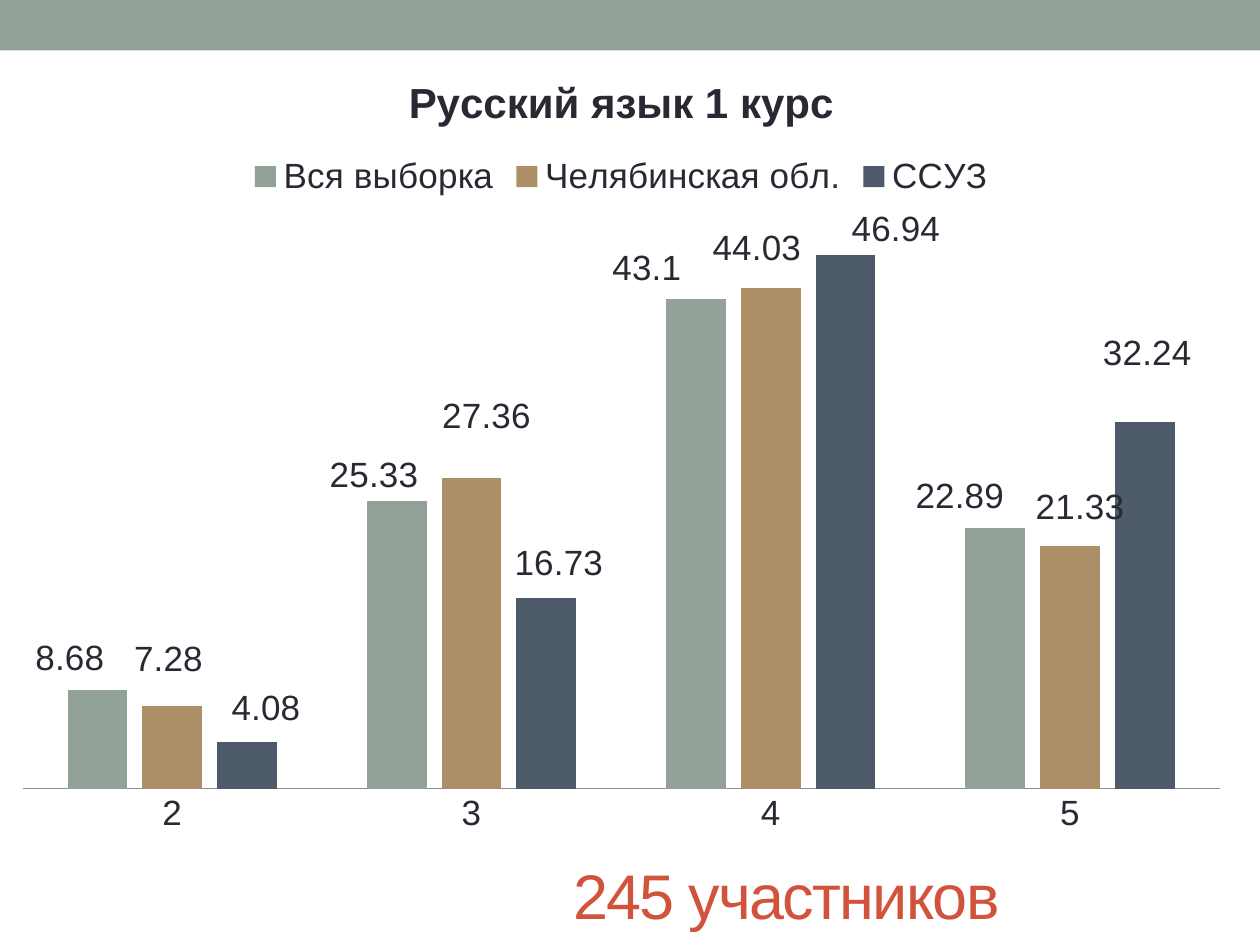
from lxml.etree import SubElement
from pptx import Presentation
from pptx.chart.data import CategoryChartData
from pptx.dml.color import RGBColor
from pptx.enum.chart import (XL_CHART_TYPE, XL_LABEL_POSITION,
                             XL_LEGEND_POSITION, XL_TICK_MARK)
from pptx.enum.shapes import MSO_SHAPE
from pptx.enum.text import MSO_ANCHOR, PP_ALIGN
from pptx.oxml.ns import qn
from pptx.util import Inches, Pt

FONT = "Arial"
GRADES = ["2", "3", "4", "5"]
SERIES = [
    ("Вся выборка", "93A299", [8.68, 25.33, 43.1, 22.89],
     [(-0.22, -0.05), (-0.18, 0), (-0.39, -0.04), (-0.28, -0.06)]),
    ("Челябинская обл.", "AD8F67", [7.28, 27.36, 44.03, 21.33],
     [(-0.03, -0.17), (0.12, -0.29), (-0.11, -0.12), (0.08, -0.11)]),
    ("ССУЗ", "4C5A6A", [4.08, 16.73, 46.94, 32.24],
     [(0.15, -0.07), (0.1, -0.08), (0.4, -0.01), (0.02, -0.35)]),
]


def rgb(value):
    """Return the colour for a hex string."""
    return RGBColor.from_string(value)


def style_font(font, size, color, bold=False):
    """Set face, size, colour and weight of a font."""
    font.name, font.size, font.bold = FONT, Pt(size), bold
    font.color.rgb = rgb(color)


def set_layout(parent, index, **settings):
    """Replace the layout of a chart part by a manual one."""
    for old in parent.findall(qn("c:layout")):
        parent.remove(old)
    layout = SubElement(parent, qn("c:layout"))
    manual = SubElement(layout, qn("c:manualLayout"))
    for tag, value in settings.items():
        SubElement(manual, qn(f"c:{tag}")).set("val", str(value))
    parent.insert(index, layout)


def add_band(slide, left, top, width, height):
    """Draw the coloured band."""
    sp = slide.shapes.add_shape(MSO_SHAPE.RECTANGLE, left, top, width, height)
    sp.shadow.inherit = False
    sp.fill.solid()
    sp.fill.fore_color.rgb = rgb("93A299")
    sp.line.fill.background()


def place_title(slide, left, top, width, height):
    """Place and format the slide title."""
    title = slide.shapes.title
    title.left, title.top, title.width, title.height = left, top, width, height
    tf = title.text_frame
    tf.text = "245 участников"
    tf.vertical_anchor = MSO_ANCHOR.MIDDLE
    p = tf.paragraphs[0]
    p.alignment = PP_ALIGN.LEFT
    r = p.runs[0]
    style_font(r.font, 36, "D2533C")
    r.font._element.set("spc", "-100")


def label_points(series, offsets, width, height):
    """Show the values of a series, each label shifted by its offset in inches."""
    series.data_labels.show_value = True
    for i in range(len(offsets)):
        series.points[i].data_label.position = XL_LABEL_POSITION.OUTSIDE_END
    for leader in series._element.xpath("c:dLbls/c:showLeaderLines"):
        leader.set("val", "0")
    labels = series._element.xpath("c:dLbls/c:dLbl")
    for label, (dx, dy) in zip(labels, offsets):
        set_layout(label, 1, x=Inches(dx) / width, y=Inches(dy) / height)


def add_grades_chart(slide, left, top, width, height):
    """Add the clustered column chart of grades."""
    data = CategoryChartData()
    data.categories = GRADES
    for name, _, values, _ in SERIES:
        data.add_series(name, values)
    chart = slide.shapes.add_chart(XL_CHART_TYPE.COLUMN_CLUSTERED,
                                   left, top, width, height, data).chart
    style_font(chart.font, 20, "292934")

    chart.has_title = True
    tf = chart.chart_title.text_frame
    tf.text = "Русский язык 1 курс"
    style_font(tf.paragraphs[0].runs[0].font, 24, "292934", bold=True)
    chart.has_legend = True
    chart.legend.position = XL_LEGEND_POSITION.TOP
    chart.legend.include_in_layout = False

    axis = chart.category_axis
    axis.major_tick_mark = axis.minor_tick_mark = XL_TICK_MARK.NONE
    axis.format.line.color.rgb = rgb("8C8C8C")
    axis.format.line.width = Pt(1)
    axis = chart.value_axis
    axis.minimum_scale, axis.maximum_scale = 0, 50
    axis.has_major_gridlines = False
    axis.visible = False

    plot = chart.plots[0]
    plot.gap_width, plot.overlap = 150, -25
    plot.vary_by_categories = False
    for series, (_, color, _, offsets) in zip(plot.series, SERIES):
        series.format.fill.solid()
        series.format.fill.fore_color.rgb = rgb(color)
        label_points(series, offsets, width, height)
    set_layout(chart._chartSpace.chart.plotArea, 0,
               layoutTarget="inner", xMode="edge", yMode="edge",
               x=Inches(0.2) / width, y=Inches(1.39) / height,
               w=Inches(9.5) / width, h=Inches(4.51) / height)


def main():
    """Build the slide and save it."""
    prs = Presentation()
    prs.slide_width, prs.slide_height = Inches(10), Inches(7.5)
    slide = prs.slides.add_slide(prs.slide_layouts[5])
    add_band(slide, 0, 0, prs.slide_width, Inches(0.4))
    place_title(slide, Inches(4.45), Inches(6.82), Inches(5.2), Inches(0.55))
    add_grades_chart(slide, Inches(-0.02), Inches(0.36), Inches(9.9), Inches(6.38))
    prs.save("out.pptx")


if __name__ == "__main__":
    main()
